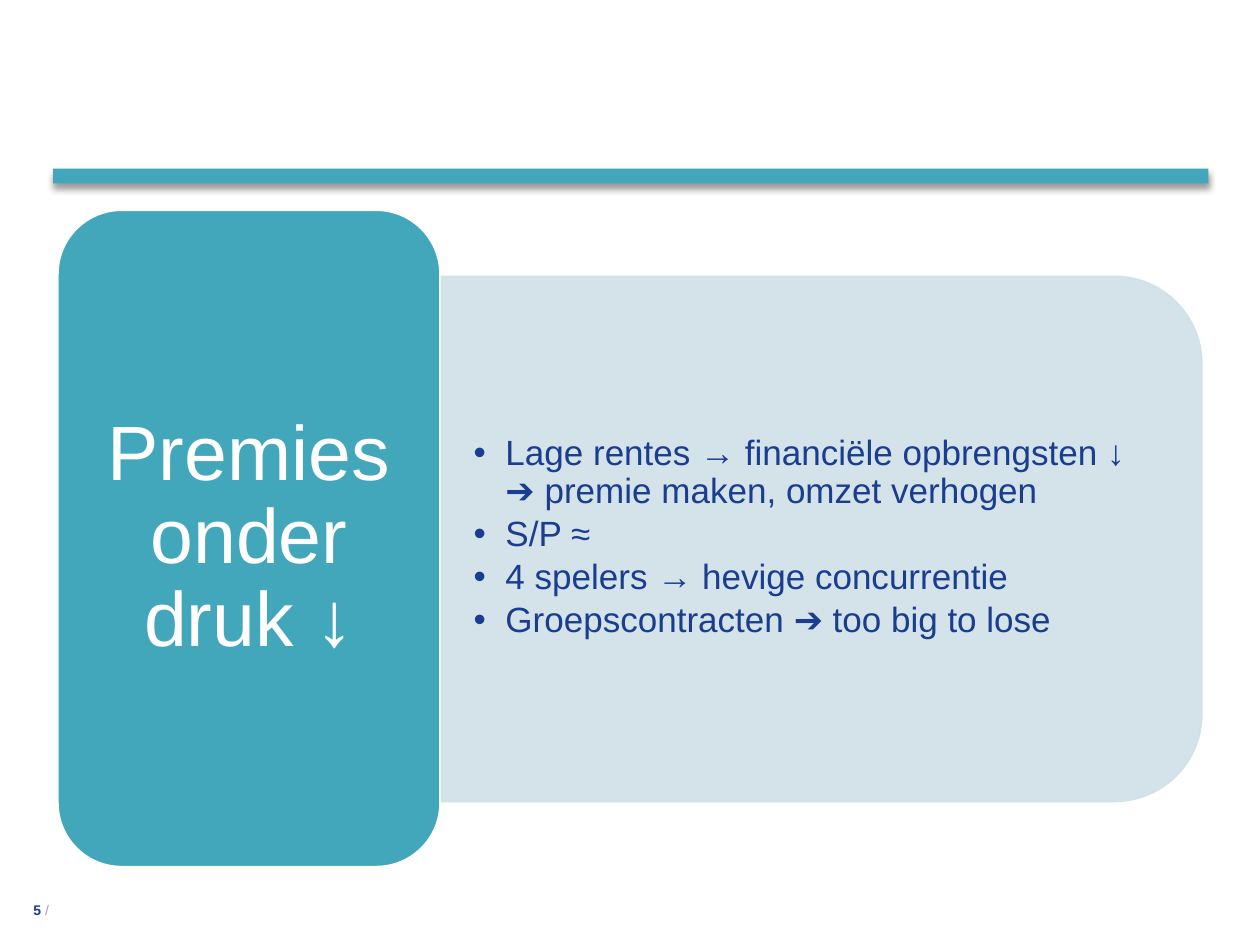
from lxml import etree
from pptx import Presentation
from pptx import util as u
from pptx.dml.color import RGBColor
from pptx.enum import shapes, text
from pptx.oxml import ns

TEAL = RGBColor(0x42, 0xA7, 0xBB)
PALE = RGBColor(0xCF, 0xE1, 0xE7)
NAVY = RGBColor(0x1A, 0x3D, 0x8F)
GREY = RGBColor(0x9E, 0xA3, 0xA6)
WHITE = RGBColor(0xFF, 0xFF, 0xFF)


def add_box(kind, left, top, width, height, color, line=None):
    sp = slide.shapes.add_shape(kind, u.Cm(left), u.Cm(top), u.Cm(width), u.Cm(height))
    sp.shadow.inherit = False
    sp.fill.solid()
    sp.fill.fore_color.rgb = color
    if line is None:
        sp.line.fill.background()
    else:
        sp.line.color.rgb = line
        sp.line.width = u.Pt(0.85)
    return sp


def format_text(tf, margin_x, margin_y, anchor):
    tf.word_wrap = True
    tf.auto_size = text.MSO_AUTO_SIZE.NONE
    tf.vertical_anchor = anchor
    tf.margin_left = tf.margin_right = u.Cm(margin_x)
    tf.margin_top = tf.margin_bottom = u.Cm(margin_y)


prs = Presentation()
prs.slide_width, prs.slide_height = u.Cm(25.4), u.Cm(19.05)
slide = prs.slides.add_slide(prs.slide_layouts[1])
title, body = slide.placeholders
title.element.getparent().remove(title.element)

# Header bar with a soft shadow
bar = add_box(shapes.MSO_SHAPE.RECTANGLE, 1.07, 3.4, 23.29, 0.3, TEAL)
effects = bar.element.spPr.find(ns.qn("a:effectLst"))
shadow = etree.SubElement(effects, ns.qn("a:outerShdw"), blurRad=str(u.Pt(4)),
                          dist=str(u.Pt(3)), dir="5400000", rotWithShape="0")
black = etree.SubElement(shadow, ns.qn("a:srgbClr"), val="000000")
etree.SubElement(black, ns.qn("a:alpha"), val="40000")

# Page number
sp = slide.shapes.add_textbox(u.Cm(0), u.Cm(18.03), u.Cm(1.07), u.Cm(0.48))
format_text(sp.text_frame, 0, 0, text.MSO_ANCHOR.BOTTOM)
p = sp.text_frame.paragraphs[0]
p.alignment = text.PP_ALIGN.RIGHT
for part, color, bold in (("5", NAVY, True), (" / ", GREY, False)):
    r = p.add_run()
    r.text = part
    r.font.name, r.font.size, r.font.bold = "Arial", u.Pt(8), bold
    r.font.color.rgb = color

# Pale panel, turned so that its round corners face right
panel = add_box(shapes.MSO_SHAPE.ROUND_2_SAME_RECTANGLE, 11.25, 3.18, 10.59, 15.37, PALE, PALE)
panel.rotation = 90
for color in panel.element.spPr.iter(ns.qn("a:srgbClr")):
    etree.SubElement(color, ns.qn("a:alpha"), val="90000")

# Bullet list, raised above the panel
slide.shapes._spTree.append(body.element)
body.left, body.top, body.width, body.height = u.Cm(8.86), u.Cm(6.07), u.Cm(14.83), u.Cm(9.55)
tf = body.text_frame
format_text(tf, 0.69, 0.36, text.MSO_ANCHOR.MIDDLE)
tf.text = "\n".join((
    "Lage rentes → financiële opbrengsten ↓ ➔ premie maken, omzet verhogen",
    "S/P ≈",
    "4 spelers → hevige concurrentie",
    "Groepscontracten ➔ too big to lose",
))
for p in tf.paragraphs:
    pPr = p._p.get_or_add_pPr()
    pPr.set("marL", str(u.Cm(0.64)))
    pPr.set("indent", str(u.Cm(-0.64)))
    p.line_spacing, p.space_before, p.space_after = 0.9, u.Pt(0), u.Pt(3)
    for r in p.runs:
        r.font.name, r.font.size = "Arial", u.Pt(20)
        r.font.color.rgb = NAVY

# Heading card
card = add_box(shapes.MSO_SHAPE.ROUNDED_RECTANGLE, 1.17, 4.24, 7.7, 13.23, TEAL, WHITE)
format_text(card.text_frame, 0.46, 0.23, text.MSO_ANCHOR.MIDDLE)
card.text_frame.text = "Premies onder druk ↓"
p = card.text_frame.paragraphs[0]
p.alignment = text.PP_ALIGN.CENTER
p.line_spacing = 0.9
r = p.runs[0]
r.font.name, r.font.size = "Arial", u.Pt(44)
r.font.color.rgb = WHITE

prs.save("out.pptx")
